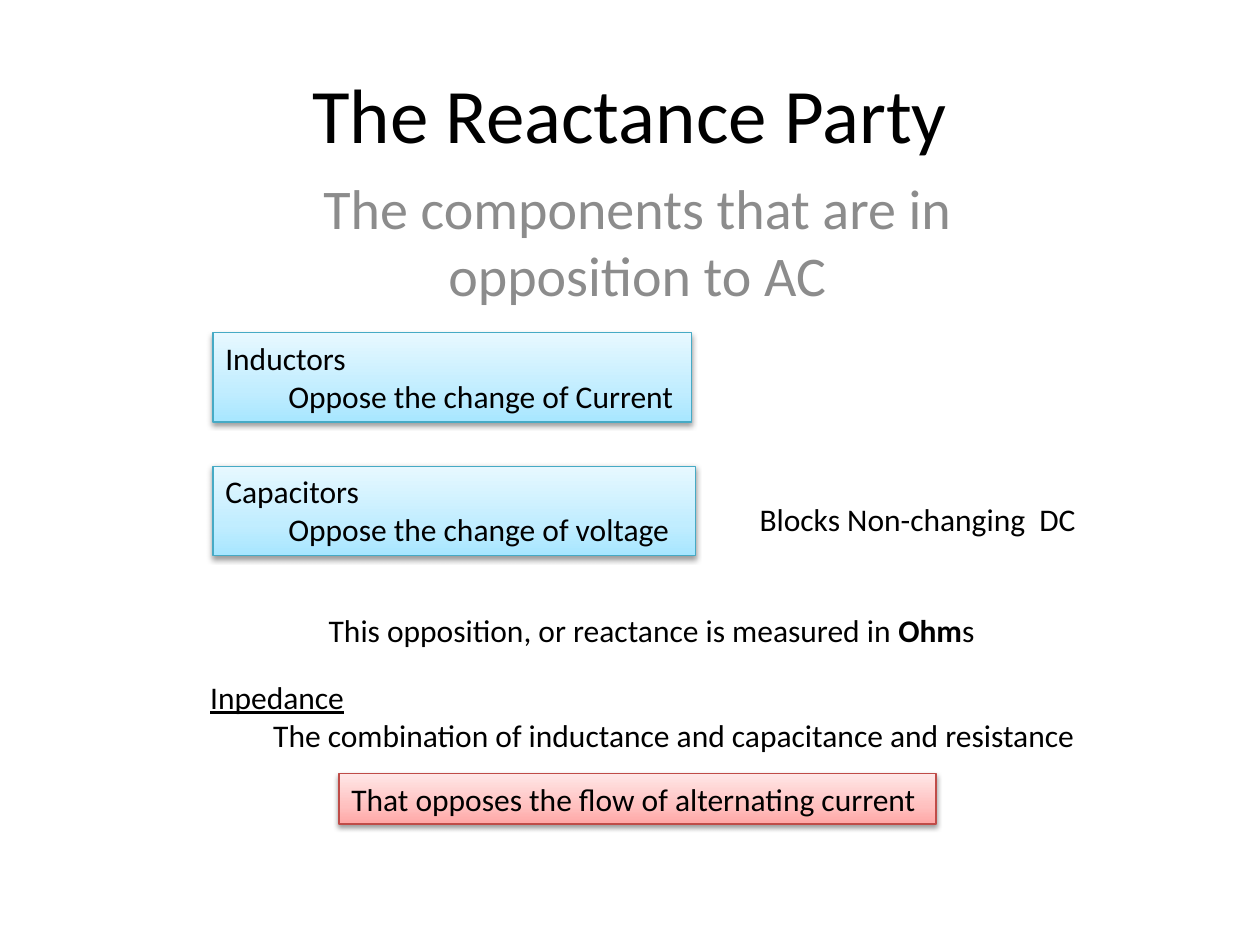
from copy import deepcopy
from pptx import Presentation
from pptx.dml.color import RGBColor
from pptx.enum.shapes import MSO_SHAPE
from pptx.enum.text import MSO_ANCHOR, PP_ALIGN
from pptx.oxml import parse_xml
from pptx.oxml.ns import nsdecls
from pptx.util import Inches, Pt

RECT = MSO_SHAPE.RECTANGLE
TOP, MIDDLE = MSO_ANCHOR.TOP, MSO_ANCHOR.MIDDLE
LEFT, CENTER = PP_ALIGN.LEFT, PP_ALIGN.CENTER

WIDE, HIGH = 10, 7.5
ONE, TWO = 0.4, 0.71
EDGE = 1.69
BLUE = (["A7E6FF", "C1EDFF", "E7F8FF"], "46AAC5")
RED = (["FFA6A5", "FFC0BF", "FFE7E7"], "BF4C48")
STOPS = [0, 0.35, 1]

HEADS = [
    ((0.75, 0.09, 8.5, 1.61), "The Reactance Party",
     dict(size=44, anchor=MIDDLE)),
    ((1.56, 1.33, 7, 1.33), "The components that are in opposition to AC",
     dict(size=32, color="8C8C8C")),
]
CARDS = [
    ((EDGE, 2.64, 3.8, TWO), ["Inductors", "Oppose the change of Current"], BLUE),
    ((EDGE, 3.7, 3.83, TWO), ["Capacitors", "Oppose the change of voltage"], BLUE),
    ((2.69, 6.14, 4.74, ONE), ["That opposes the flow of alternating current"], RED),
]
NOTES = [
    ((2.51, 4.8, 5.39, ONE),
     [[("This opposition, or reactance is measured in ", {}),
       ("Ohm", {"bold": True}), ("s", {})]]),
    ((1.57, 5.33, 7.27, TWO),
     [[("Inpedance", {"underline": True})],
      "The combination of inductance and capacitance and resistance"]),
    ((5.93, 3.92, 2.74, ONE), ["Blocks Non-changing  DC"]),
]


def rgb(code):
    return RGBColor.from_string(code)


def write(shape, lines, size=18, color="000000", align=LEFT, anchor=TOP):
    frame = shape.text_frame
    frame.word_wrap = True
    frame.vertical_anchor = anchor
    for row, line in enumerate(lines):
        para = frame.add_paragraph() if row else frame.paragraphs[0]
        para.alignment = align
        if row:
            props = para._p.get_or_add_pPr()
            props.set("marL", str(Inches(0.5)))
            props.set("indent", "0")
        for text, marks in [(line, {})] if isinstance(line, str) else line:
            run = para.add_run()
            run.text = text
            font = run.font
            font.name, font.size = "Calibri", Pt(size)
            font.color.rgb = rgb(color)
            for key, value in marks.items():
                setattr(font, key, value)


def paint(shape, tones, edge):
    fill = shape.fill
    fill.gradient()
    fill.gradient_angle = 90
    first = fill.gradient_stops[0]._gs
    first.addnext(deepcopy(first))
    for stop, place, tone in zip(fill.gradient_stops, STOPS, tones):
        stop.position = place
        stop.color.rgb = rgb(tone)
    shape.line.color.rgb = rgb(edge)
    shape.line.width = Pt(0.75)
    shape.shadow.inherit = False
    shape._element.spPr[-1].append(parse_xml(
        f'<a:outerShdw {nsdecls("a")} blurRad="{Pt(3.1)}" dist="{Pt(1.6)}" '
        'dir="5400000" rotWithShape="0"><a:srgbClr val="000000">'
        '<a:alpha val="38000"/></a:srgbClr></a:outerShdw>'))


def main():
    deck = Presentation()
    deck.slide_width, deck.slide_height = Inches(WIDE), Inches(HIGH)
    shapes = deck.slides.add_slide(deck.slide_layouts[6]).shapes
    for box, text, style in HEADS:
        write(shapes.add_textbox(*map(Inches, box)), [text], align=CENTER, **style)
    for box, lines, (tones, edge) in CARDS:
        card = shapes.add_shape(RECT, *map(Inches, box))
        paint(card, tones, edge)
        write(card, lines)
    for box, lines in NOTES:
        write(shapes.add_textbox(*map(Inches, box)), lines)
    deck.save("out.pptx")


if __name__ == "__main__":
    main()
